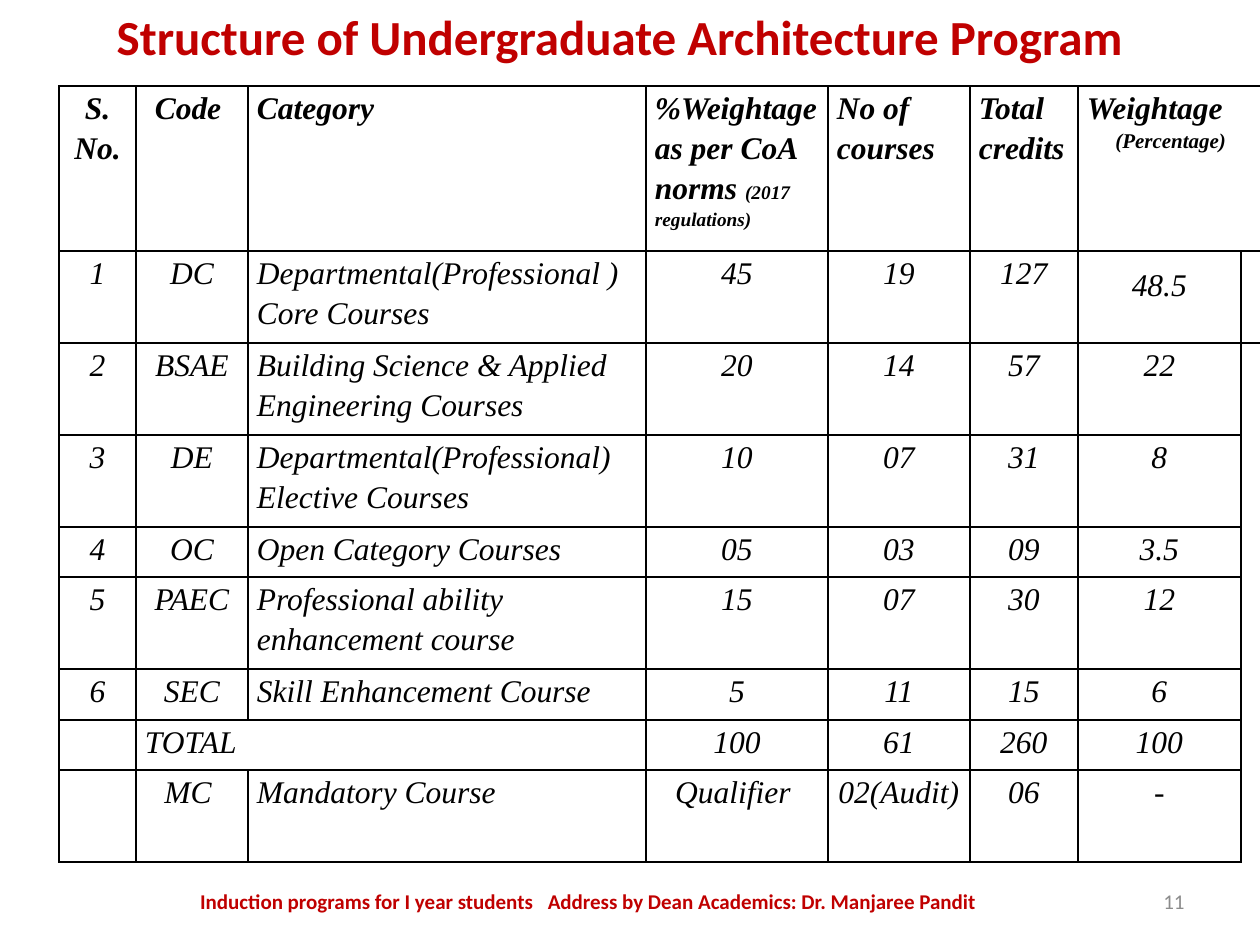
import dataclasses
import pptx
import pptx.dml.color
import pptx.enum.text
import pptx.oxml.ns
import pptx.util
from lxml import etree

ALIGN = pptx.enum.text.PP_ALIGN
ANCHOR = pptx.enum.text.MSO_ANCHOR
SCALE = 914400 / 126


@dataclasses.dataclass(frozen=True)
class Theme:
    red: str = "C00000"
    gray: str = "8C8C8C"
    black: str = "000000"
    sans: str = "Calibri"
    serif: str = "Times New Roman"
    title: int = 28
    body: int = 18
    small: int = 12
    note: int = 11
    line: int = 1
    plain: str = "{2D5ABB26-0587-4C30-8999-92F81FD0307C}"


THEME = Theme()


@dataclasses.dataclass(frozen=True)
class Label:
    left: int
    top: int
    width: int
    height: int
    words: tuple[str, ...]
    size: int
    color: str
    bold: bool
    align: ALIGN
    anchor: ANCHOR


@dataclasses.dataclass(frozen=True)
class Course:
    number: str
    code: str
    title: str
    norm: str
    count: str
    credit: str
    weight: str
    height: int = 92


LABELS = (
    Label(35, 876, 1111, 50,
          ("Induction programs for I year students", " ",
           "Address by Dean Academics: Dr. Manjaree Pandit "),
          THEME.small, THEME.red, True, ALIGN.CENTER, ANCHOR.MIDDLE),
    Label(903, 876, 294, 50, ("11",),
          THEME.small, THEME.gray, False, ALIGN.RIGHT, ANCHOR.MIDDLE),
    Label(54, 0, 1131, 72, ("Structure of Undergraduate Architecture Program",),
          THEME.title, THEME.red, True, ALIGN.CENTER, ANCHOR.TOP),
)
COURSES = (
    Course("S. No.", "Code ", "Category", "%Weightage as per CoA norms ",
           "No of courses", "Total credits", "Weightage", 165),
    Course("1", "DC", "Departmental(Professional ) Core Courses",
           "45", "19", "127", "48.5"),
    Course("2", "BSAE", "Building Science & Applied Engineering Courses",
           "20", "14", "57", "22"),
    Course("3", "DE", "Departmental(Professional) Elective Courses",
           "10", "07", "31", "8"),
    Course("4", "OC", "Open Category Courses", "05", "03", "09", "3.5", 50),
    Course("5", "PAEC", "Professional ability enhancement course",
           "15", "07", "30", "12"),
    Course("6", "SEC", "Skill Enhancement Course", "5", "11", "15", "6", 51),
    Course("", "TOTAL", "", "100", "61", "260", "100", 50),
    Course("", "MC ", "Mandatory Course", "Qualifier ", "02(Audit)", "06", "-"),
)
WIDTHS = (77, 112, 398, 182, 142, 108, 163, 19)
LAST = len(WIDTHS) - 1
TOTAL = 7


def px(count: int) -> int:
    return round(count * SCALE)


def style(run, font: str, size: int, color: str, bold: bool, slant: bool = False) -> None:
    run.font.name = font
    run.font.size = pptx.util.Pt(size)
    run.font.bold = bold
    run.font.italic = slant
    run.font.color.rgb = pptx.dml.color.RGBColor.from_string(color)


def draw_label(slide, label: Label) -> None:
    box = slide.shapes.add_textbox(
        px(label.left), px(label.top), px(label.width), px(label.height))
    frame = box.text_frame
    frame.word_wrap = True
    frame.vertical_anchor = label.anchor
    para = frame.paragraphs[0]
    para.alignment = label.align
    para.text = label.words[0]
    for word in label.words[1:]:
        para.add_run().text = word
    for run in para.runs:
        style(run, THEME.sans, label.size, label.color, label.bold)
        if run.text == " ":
            run._r.get_or_add_rPr().set("spc", "540")


def draw_edge(cell, sides: str) -> None:
    props = cell._tc.get_or_add_tcPr()
    for side in sides:
        edge = etree.SubElement(props, pptx.oxml.ns.qn(f"a:ln{side}"),
                                w=str(pptx.util.Pt(THEME.line)))
        fill = etree.SubElement(edge, pptx.oxml.ns.qn("a:solidFill"))
        etree.SubElement(fill, pptx.oxml.ns.qn("a:srgbClr"), val=THEME.black)


def fill_cell(cell, text: str, head: bool, align: ALIGN, space: float) -> None:
    para = cell.text_frame.paragraphs[0]
    para.text = text
    para.alignment = align
    para.line_spacing = space
    for run in para.runs:
        style(run, THEME.serif, THEME.body, THEME.black, head, True)


def draw_table(slide, left: int, top: int) -> None:
    high = sum(course.height for course in COURSES)
    shape = slide.shapes.add_table(len(COURSES), len(WIDTHS), px(left), px(top),
                                   px(sum(WIDTHS)), px(high))
    table = shape.table
    table.first_row = table.horz_banding = False
    table._tbl.tblPr.find(pptx.oxml.ns.qn("a:tableStyleId")).text = THEME.plain
    for col, width in zip(table.columns, WIDTHS):
        col.width = px(width)
    for y, course in enumerate(COURSES):
        table.rows[y].height = px(course.height)
        texts = (course.number, course.code, course.title, course.norm,
                 course.count, course.credit, course.weight, "")
        for x, text in enumerate(texts):
            cell = table.cell(y, x)
            cell.margin_left = cell.margin_right = px(9)
            cell.margin_top = cell.margin_bottom = 0
            outer = x == LAST and y > 0
            draw_edge(cell, ("LT" if y == 1 else "L") if outer else "LRTB")
            cell.fill.background()
            flush = x == 2 or (y == 0 and x > 1) or (y == TOTAL and x == 1)
            fill_cell(cell, text, y == 0, ALIGN.LEFT if flush else ALIGN.CENTER,
                      1.5 if (y, x) == (1, 6) else 1.15)
    table.cell(0, 6).merge(table.cell(0, LAST))
    table.cell(TOTAL, 1).merge(table.cell(TOTAL, 2))

    norm = table.cell(0, 3).text_frame.paragraphs[0].add_run()
    norm.text = "(2017 regulations)"
    style(norm, THEME.serif, THEME.note, THEME.black, True, True)
    para = table.cell(0, 6).text_frame.add_paragraph()
    para.text = "(Percentage)"
    para.alignment = ALIGN.CENTER
    para.line_spacing = 1.15
    style(para.runs[0], THEME.serif, THEME.small, THEME.black, True, True)


def main() -> None:
    deck = pptx.Presentation()
    deck.slide_width, deck.slide_height = px(1260), px(945)
    slide = deck.slides.add_slide(deck.slide_layouts[6])
    draw_table(slide, 59, 86)
    for label in LABELS:
        draw_label(slide, label)
    deck.save("out.pptx")


if __name__ == "__main__":
    main()
